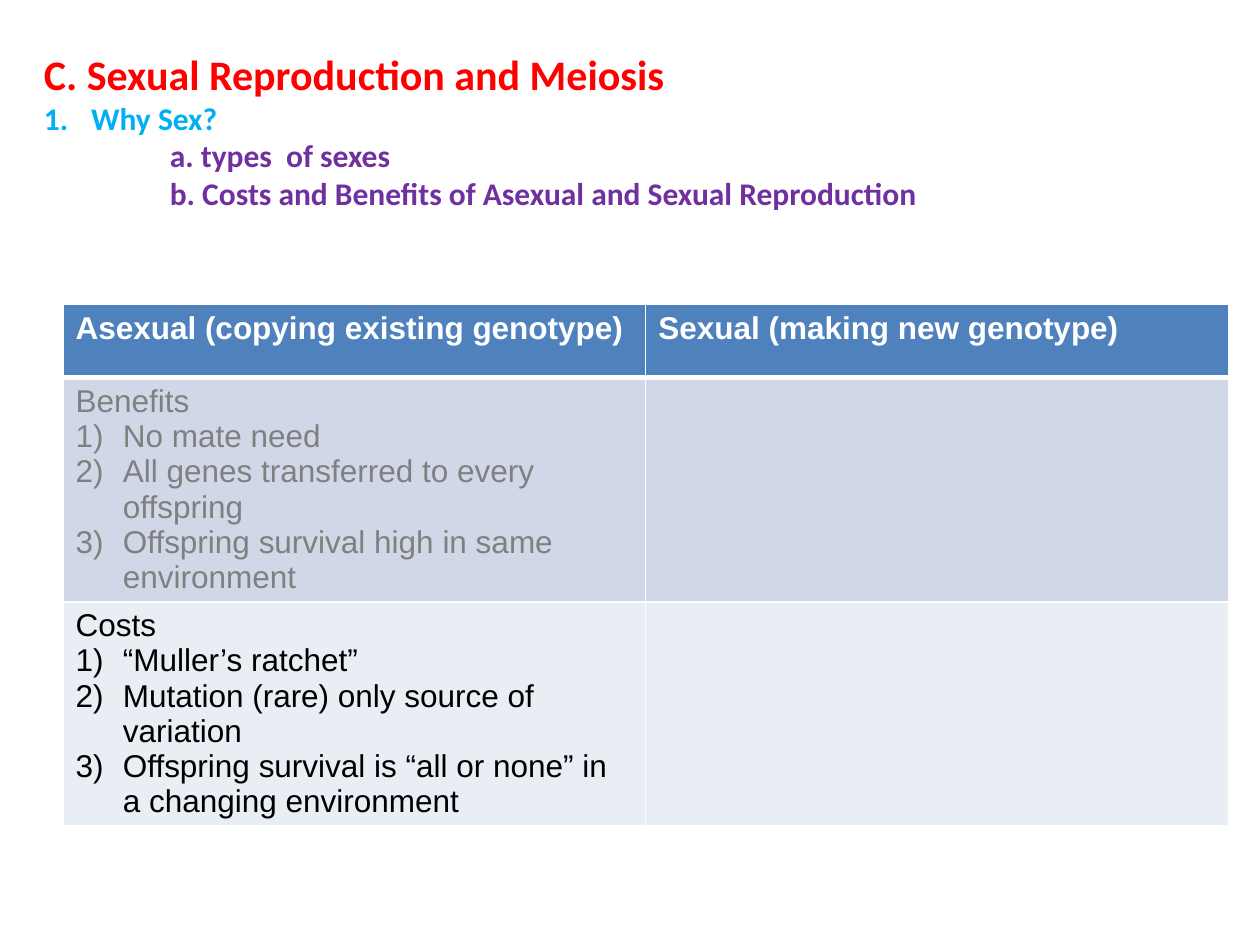
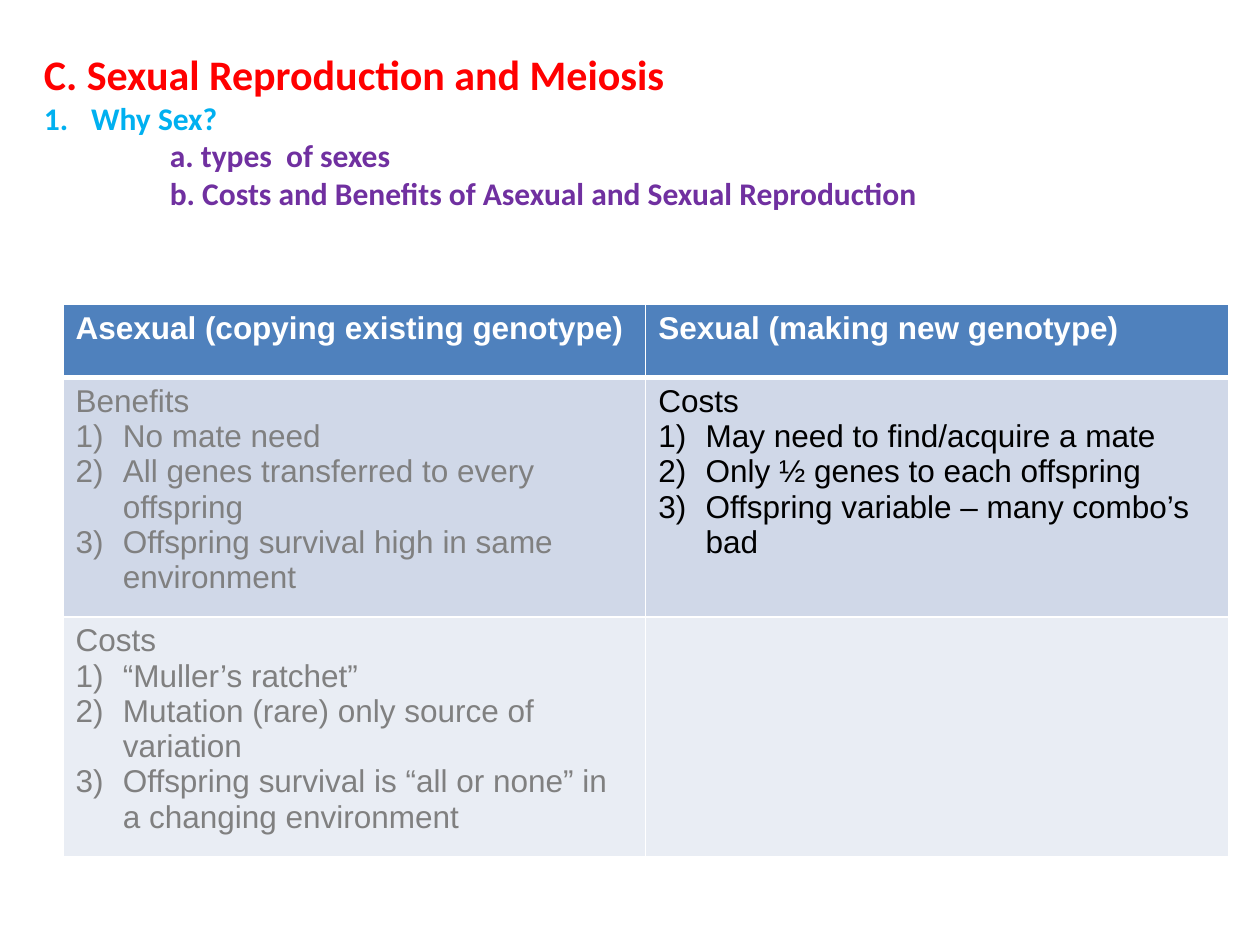
from lxml import etree
from pptx import Presentation
from pptx.dml.color import RGBColor
from pptx.oxml import ns
from pptx.util import Pt

WHITE = RGBColor(0xFF, 0xFF, 0xFF)
BLACK = RGBColor(0x00, 0x00, 0x00)
GRAY = RGBColor(0x80, 0x80, 0x80)
RED = RGBColor(0xFF, 0x00, 0x00)
SKY = RGBColor(0x00, 0xB0, 0xF0)
PURPLE = RGBColor(0x70, 0x30, 0xA0)
HEADER_BLUE = RGBColor(0x4F, 0x81, 0xBD)
BAND_DARK = RGBColor(0xD0, 0xD8, 0xE8)
BAND_LIGHT = RGBColor(0xE9, 0xED, 0xF4)
ROW_FILLS = [HEADER_BLUE, BAND_DARK, BAND_LIGHT]
ROW_HEIGHTS = [41.75, 115, 115]
HANGING = 27

OUTLINE = [
    ("C. Sexual Reproduction and Meiosis", 24, RED, 0, None),
    ("Why Sex?", 18, SKY, 0, "arabicPeriod"),
    ("a. types  of sexes", 18, PURPLE, 72, None),
    ("b. Costs and Benefits of Asexual and Sexual Reproduction", 18, PURPLE, 72, None),
]
HEADINGS = ["Asexual (copying existing genotype)", "Sexual (making new genotype)"]
ASEXUAL_BENEFITS = [
    "Benefits",
    "No mate need",
    "All genes transferred to every offspring",
    "Offspring survival high in same environment",
]
ASEXUAL_COSTS = [
    "Costs",
    "“Muller’s ratchet”",
    "Mutation (rare) only source of variation",
    "Offspring survival is “all or none” in a changing environment",
]
SEXUAL_COSTS = [
    "Costs",
    "May need to find/acquire a mate",
    "Only ½ genes to each offspring",
    "Offspring variable – many combo’s bad",
]
SLIDES = [
    {(1, 0): (ASEXUAL_BENEFITS, GRAY), (2, 0): (ASEXUAL_COSTS, BLACK)},
    {(1, 0): (ASEXUAL_BENEFITS, GRAY), (2, 0): (ASEXUAL_COSTS, GRAY),
     (1, 1): (SEXUAL_COSTS, BLACK)},
]


def write_line(frame, index, words, font, size, color, bold, indent=0, numbering=None):
    para = frame.paragraphs[0] if index == 0 else frame.add_paragraph()
    properties = para._p.get_or_add_pPr()
    if numbering:
        properties.set("marL", str(Pt(HANGING)))
        properties.set("indent", str(-Pt(HANGING)))
        etree.SubElement(properties, ns.qn("a:buAutoNum"), type=numbering)
    elif indent:
        properties.set("marL", str(Pt(indent)))
    span = para.add_run()
    span.text = words
    span.font.name = font
    span.font.size = Pt(size)
    span.font.bold = bold
    span.font.color.rgb = color


def style_cell(cell, row):
    cell.fill.solid()
    cell.fill.fore_color.rgb = ROW_FILLS[row]
    properties = cell._tc.get_or_add_tcPr()
    widths = {"L": 1, "R": 1, "T": 3 if row == 1 else 1, "B": 3 if row == 0 else 1}
    for position, (side, width) in enumerate(widths.items()):
        border = etree.Element(ns.qn(f"a:ln{side}"), w=str(Pt(width)))
        paint = etree.SubElement(border, ns.qn("a:solidFill"))
        etree.SubElement(paint, ns.qn("a:srgbClr"), val=str(WHITE))
        properties.insert(position, border)


deck = Presentation()
deck.slide_width = Pt(720)
deck.slide_height = Pt(540)

for contents in SLIDES:
    page = deck.slides.add_slide(deck.slide_layouts[6])

    table = page.shapes.add_table(
        3, 2, Pt(36), Pt(174), Pt(666), Pt(sum(ROW_HEIGHTS))).table
    for row, height in enumerate(ROW_HEIGHTS):
        table.rows[row].height = Pt(height)
        for column in range(2):
            cell = table.cell(row, column)
            style_cell(cell, row)
            if row == 0:
                write_line(cell.text_frame, 0, HEADINGS[column], "Arial", 18, WHITE, True)
            elif (row, column) in contents:
                lines, color = contents[row, column]
                for index, words in enumerate(lines):
                    write_line(cell.text_frame, index, words, "Arial", 18, color, False,
                               numbering="arabicParenR" if index else None)

    box = page.shapes.add_textbox(Pt(18), Pt(24), Pt(648), Pt(124))
    box.text_frame.word_wrap = True
    for index, (words, size, color, indent, numbering) in enumerate(OUTLINE):
        write_line(box.text_frame, index, words, "Calibri", size, color, True, indent, numbering)

deck.save("out.pptx")
